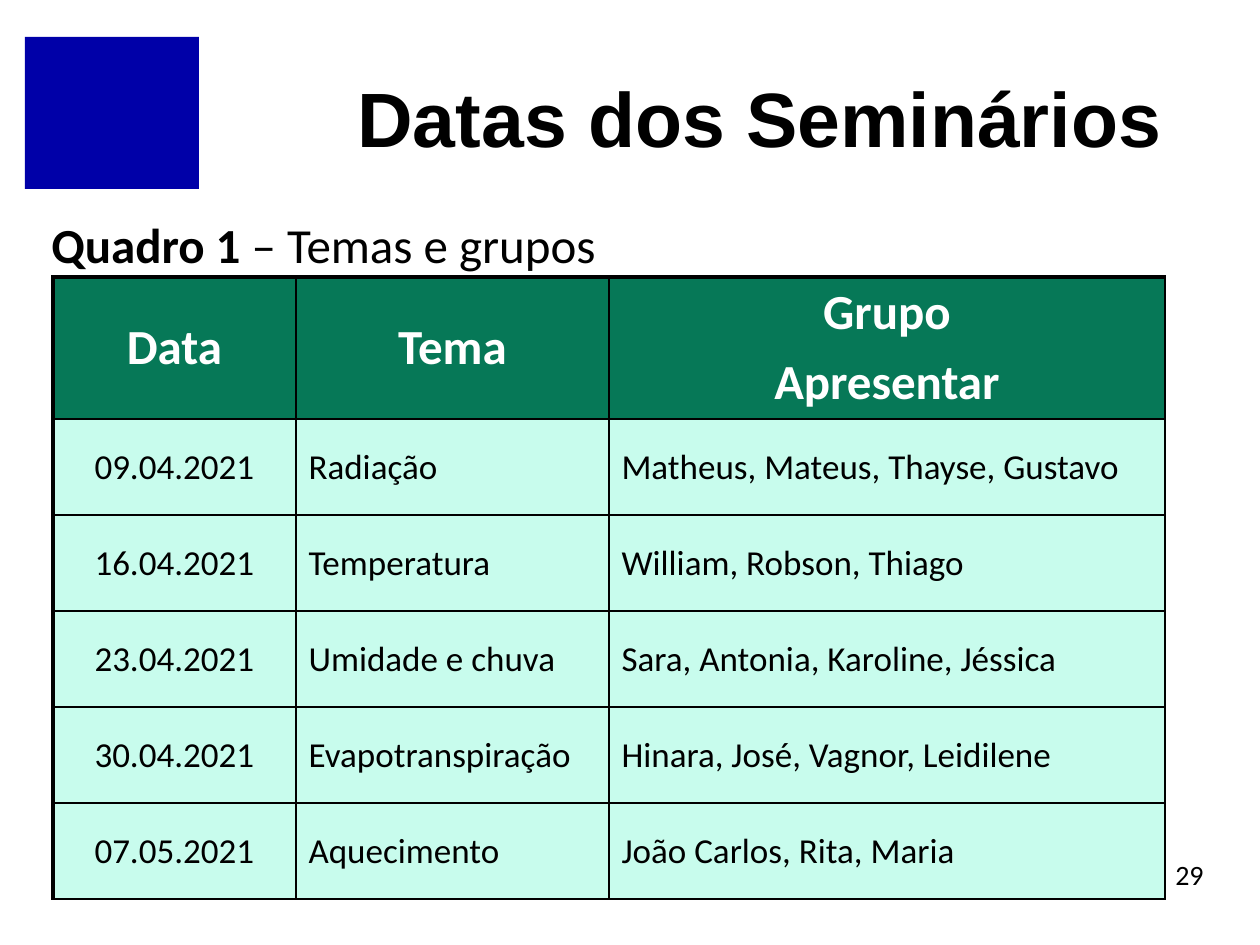
"""Build the seminar dates slide with its table of themes and groups."""
from pptx import Presentation
from pptx import util as u
from pptx.dml.color import RGBColor
from pptx.enum import shapes, text
from pptx.oxml import parse_xml
from pptx.oxml.ns import nsdecls

PX = u.Inches(1) / 126
BLACK, WHITE, BLUE = "000000", "FFFFFF", "0000A8"
GREEN, MINT = "067857", "C8FCED"
LEFT, CENTER, RIGHT = text.PP_ALIGN.LEFT, text.PP_ALIGN.CENTER, text.PP_ALIGN.RIGHT
MIDDLE = text.MSO_ANCHOR.MIDDLE


def px(*lengths):
    return [round(n * PX) for n in lengths]


def add_run(p, words, size, color=BLACK, bold=False, font="Calibri"):
    r = p.add_run()
    r.text = words
    r.font.size = u.Pt(size)
    r.font.name = font
    r.font.bold = bold
    r.font.color.rgb = RGBColor.from_string(color)


prs = Presentation()
prs.slide_width, prs.slide_height = px(1260, 945)
s = prs.slides.add_slide(prs.slide_layouts[5])

emblem = s.shapes.add_shape(shapes.MSO_SHAPE.RECTANGLE, *px(25, 37, 174, 152))
emblem.shadow.inherit = False
emblem.fill.solid()
emblem.fill.fore_color.rgb = RGBColor.from_string(BLUE)
emblem.line.fill.background()

title = s.shapes.title
title.left, title.top, title.width, title.height = px(302, 54, 873, 126)
tf = title.text_frame
tf.auto_size = text.MSO_AUTO_SIZE.NONE
tf.vertical_anchor = MIDDLE
p = tf.paragraphs[0]
p.alignment = RIGHT
add_run(p, "Datas dos Seminários", 44, bold=True, font="Arial")

rows = [
    ("Data", "Tema", "Grupo\nApresentar"),
    ("09.04.2021", "Radiação", "Matheus, Mateus, Thayse, Gustavo"),
    ("16.04.2021", "Temperatura", "William, Robson, Thiago"),
    ("23.04.2021", "Umidade e chuva", "Sara, Antonia, Karoline, Jéssica"),
    ("30.04.2021", "Evapotranspiração", "Hinara, José, Vagnor, Leidilene"),
    ("07.05.2021", "Aquecimento", "João Carlos, Rita, Maria"),
]
table = s.shapes.add_table(len(rows), 3, *px(53, 277, 1112, 622)).table
table.first_row = table.horz_banding = False
for col, width in zip(table.columns, px(243, 313, 556)):
    col.width = width
for row, height in zip(table.rows, px(142, *[96] * 5)):
    row.height = height

for i, row in enumerate(rows):
    header = i == 0
    size = 28 if header else 20
    for j, words in enumerate(row):
        cell = table.cell(i, j)
        tcPr = cell._tc.get_or_add_tcPr()
        outer = {"L": j == 0, "R": False, "T": header, "B": False}
        for side, thick in outer.items():
            width = u.Pt(2.25 if thick else 1)
            tcPr.append(parse_xml(
                f'<a:ln{side} {nsdecls("a")} w="{width}"><a:solidFill>'
                f'<a:srgbClr val="{BLACK}"/></a:solidFill></a:ln{side}>'))
        cell.fill.solid()
        cell.fill.fore_color.rgb = RGBColor.from_string(GREEN if header else MINT)
        cell.vertical_anchor = MIDDLE
        tf = cell.text_frame
        for k, line in enumerate(words.split("\n")):
            p = tf.add_paragraph() if k else tf.paragraphs[0]
            p.alignment = CENTER if header or j == 0 else LEFT
            p.space_before = u.Pt(size * 0.2)
            add_run(p, line, size, WHITE if header else BLACK, header)

labels = [
    ((39, 192, 1061, 93), LEFT, 1.2, 28, [("Quadro 1 ", True), ("– Temas e grupos", False)]),
    ((922, 849, 294, 50), RIGHT, 1, 16, [("29", False)]),
]
for box, align, spacing, size, runs in labels:
    tf = s.shapes.add_textbox(*px(*box)).text_frame
    tf.word_wrap = True
    tf.vertical_anchor = MIDDLE
    p = tf.paragraphs[0]
    p.alignment = align
    p.line_spacing = spacing
    for words, bold in runs:
        add_run(p, words, size, bold=bold)

prs.save("out.pptx")
